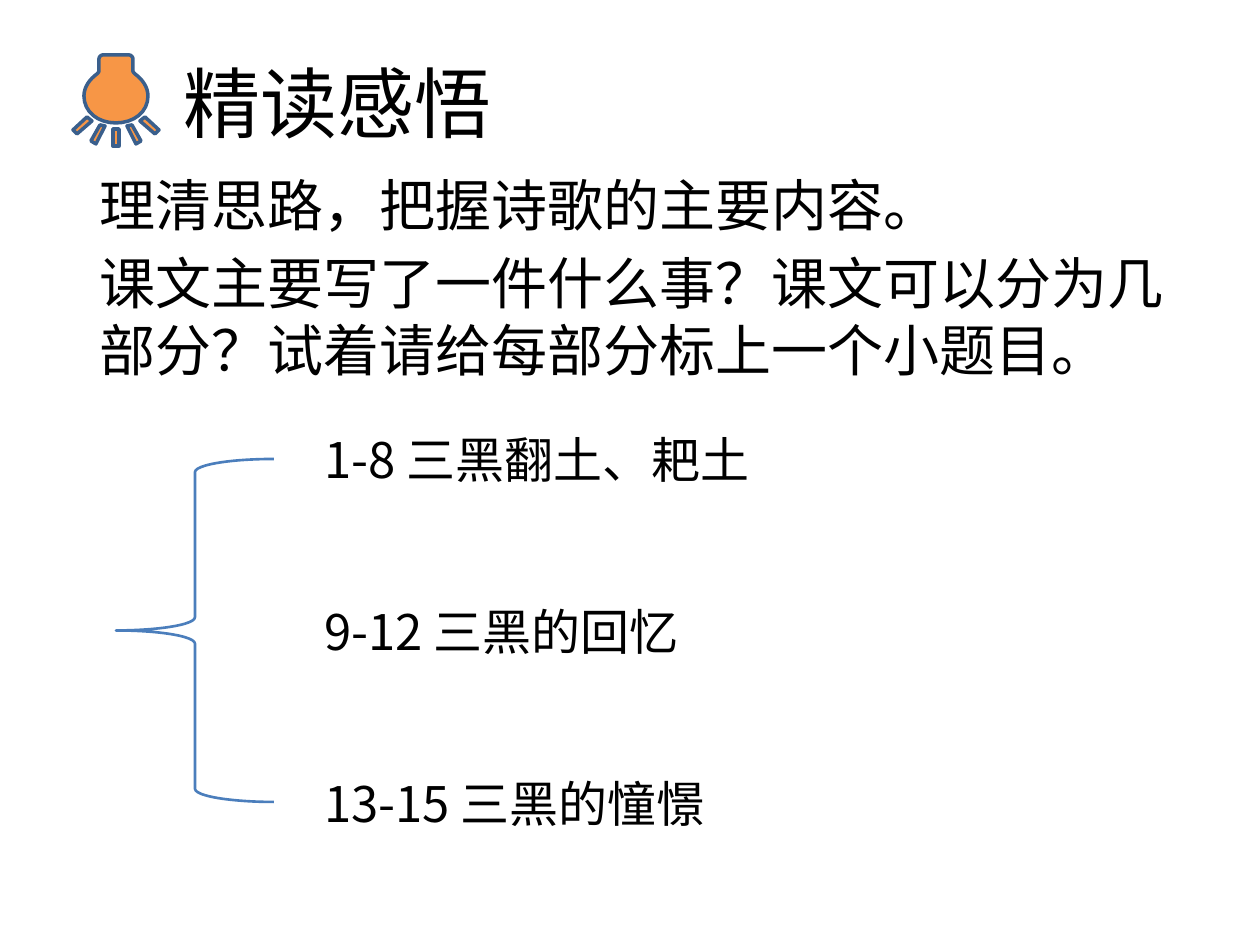
"""Builds the close-reading slide with a bulb, a prompt and a braced outline."""
from pptx import Presentation
from pptx.dml.color import RGBColor
from pptx.enum.shapes import MSO_SHAPE as Shape
from pptx.enum.text import MSO_ANCHOR as Anchor, MSO_AUTO_SIZE as AutoSize, PP_ALIGN as Align
from pptx.oxml.ns import qn
from pptx.util import Pt
from lxml.etree import SubElement

COLOURS = {"text": "000000", "bulb": "F79646", "bulb_edge": "3A5F8C", "brace": "4B7EBC"}
SCALE = 914400 / 126
SERIF, SANS = "Times New Roman", "Noto Sans CJK SC"
STEPS = 8
BULB_AXIS, BULB_TOP = 116, 55
BULB_CURVES = [
    [(13, 55), (15, 55), (17, 57), (17, 59)],
    [(17, 59), (17, 62), (17, 66), (17, 71)],
    [(17, 71), (17, 72), (18, 73), (19, 74)],
    [(19, 74), (26, 79), (32, 87), (32, 96)],
    [(32, 96), (32, 112), (18, 123), (0, 123)],
]
MIDDLE_RAY = [(-3, 129), (3, 129), (3, 146), (-3, 146)]
SIDE_RAYS = [
    [(16, 125), (25, 141), (20, 144), (11, 126)],
    [(29, 117), (43, 130), (39, 134), (24, 121)],
]
PROMPTS = [
    "理清思路，把握诗歌的主要内容。",
    "课文主要写了一件什么事？课文可以分为几部分？试着请给每部分标上一个小题目。",
]
PARTS = ["1-8 三黑翻土、耙土", "9-12 三黑的回忆", "13-15 三黑的憧憬"]


def emu(px):
    return round(px * SCALE)


def rgb(name):
    return RGBColor.from_string(COLOURS[name])


def apply(target, values):
    for key, value in values.items():
        setattr(target, key, value)


def mirrored(points):
    return [(-x, y) for x, y in points]


def curve_points(p0, p1, p2, p3):
    for step in range(STEPS + 1):
        t = step / STEPS
        weights = ((1 - t) ** 3, 3 * t * (1 - t) ** 2, 3 * t * t * (1 - t), t ** 3)
        yield tuple(sum(w * p[axis] for w, p in zip(weights, (p0, p1, p2, p3)))
                    for axis in (0, 1))


class SlideBuilder:
    def __init__(self, slide):
        self.slide = slide

    def place(self, shape, left, top, width, height):
        apply(shape, {"left": emu(left), "top": emu(top),
                      "width": emu(width), "height": emu(height)})

    def set_text(self, shape, lines, font, size, frame_format, align=Align.LEFT,
                 bullets_off=False):
        frame = shape.text_frame
        apply(frame, {"word_wrap": True, **frame_format})
        for index, line in enumerate(lines):
            paragraph = frame.paragraphs[0] if index == 0 else frame.add_paragraph()
            apply(paragraph, {"alignment": align,
                              "space_before": Pt(size * 0.2 if index else 0)})
            if bullets_off:
                properties = paragraph._p.get_or_add_pPr()
                properties.set("marL", "0")
                properties.set("indent", "0")
                SubElement(properties, qn("a:buNone"))
            run = paragraph.add_run()
            run.text = line
            apply(run.font, {"name": font, "size": Pt(size)})
            run.font.color.rgb = rgb("text")

    def title(self, text, *box):
        heading = self.slide.shapes.title
        self.place(heading, *box)
        self.set_text(heading, [text], SERIF, 44,
                      {"vertical_anchor": Anchor.MIDDLE, "auto_size": AutoSize.NONE},
                      Align.CENTER)

    def body(self, lines, *box):
        prompt = self.slide.placeholders[1]
        self.place(prompt, *box)
        self.set_text(prompt, lines, SERIF, 32,
                      {"vertical_anchor": Anchor.TOP, "auto_size": AutoSize.NONE},
                      bullets_off=True)

    def label(self, text, *box):
        part = self.slide.shapes.add_textbox(*map(emu, box))
        self.set_text(part, [text], SANS, 28, {"auto_size": AutoSize.SHAPE_TO_FIT_TEXT})

    def outline(self, shape, colour, width):
        shape.shadow.inherit = False
        shape.line.color.rgb = rgb(colour)
        shape.line.width = Pt(width)

    def brace(self, *box):
        brace = self.slide.shapes.add_shape(Shape.LEFT_BRACE, *map(emu, box))
        brace.fill.background()
        self.outline(brace, "brace", 1.5)

    def bulb(self, contours):
        builder = self.slide.shapes.build_freeform(emu(BULB_AXIS), emu(BULB_TOP))
        for contour in contours:
            points = [(emu(BULB_AXIS + x), emu(y)) for x, y in contour]
            builder.move_to(*points[0])
            builder.add_line_segments(points[1:], close=True)
        bulb = builder.convert_to_shape()
        bulb.fill.solid()
        bulb.fill.fore_color.rgb = rgb("bulb")
        self.outline(bulb, "bulb_edge", 2)


def main():
    deck = Presentation()
    apply(deck, {"slide_width": emu(1260), "slide_height": emu(945)})
    page = SlideBuilder(deck.slides.add_slide(deck.slide_layouts[1]))
    page.title("精读感悟", -229, 23, 1134, 158)
    page.body(PROMPTS, 87, 164, 1134, 248)
    half = [point for curve in BULB_CURVES for point in curve_points(*curve)]
    rays = [side for ray in SIDE_RAYS for side in (ray, mirrored(ray))]
    page.bulb([MIDDLE_RAY, *rays, half + mirrored(half)[::-1]])
    page.brace(116, 459, 158, 343)
    for row, part in enumerate(PARTS):
        page.label(part, 312, 423 + 172 * row, 814, 72)
    deck.save("out.pptx")


if __name__ == "__main__":
    main()
